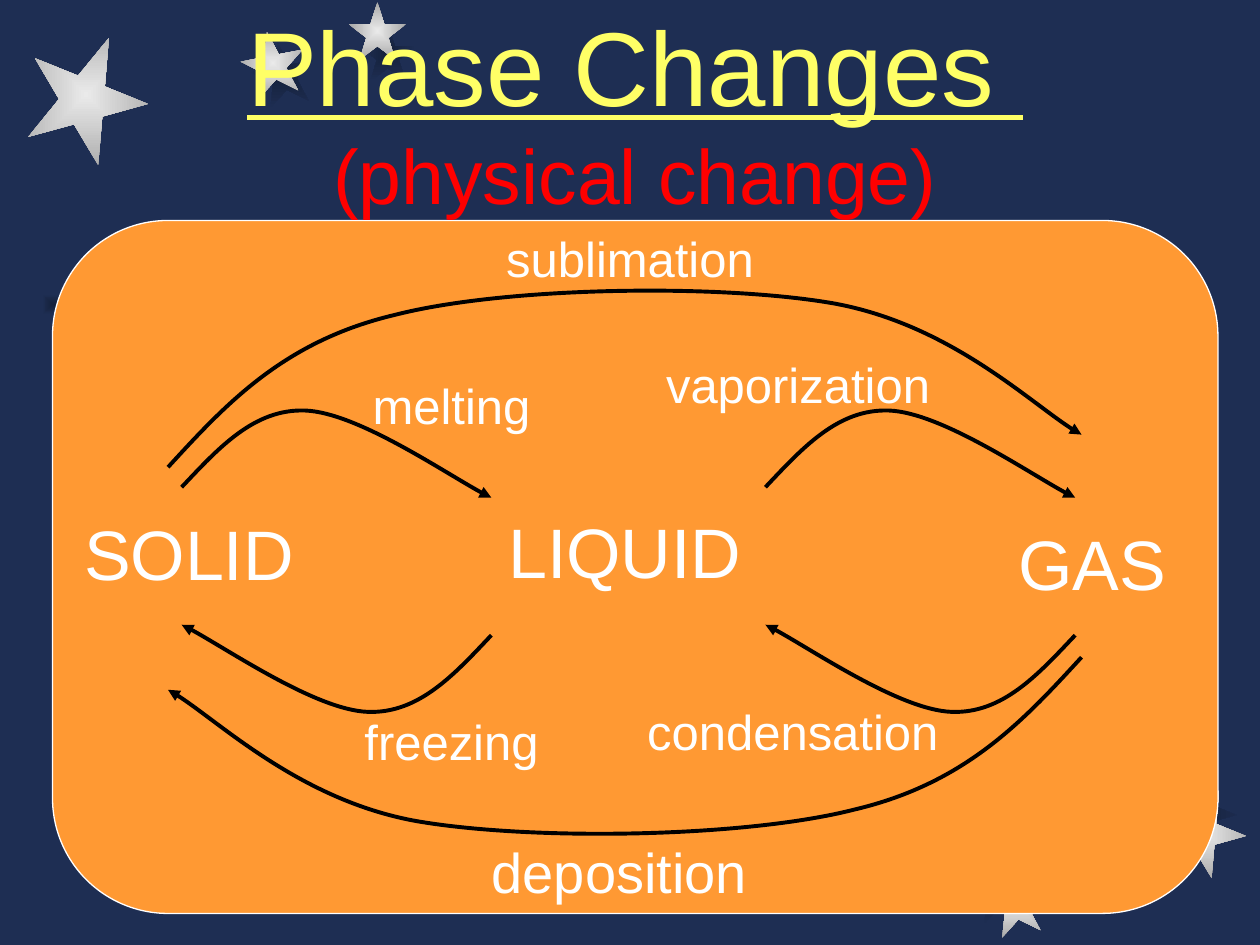
import pptx
import pptx.util
import pptx.dml.color
import pptx.enum.shapes
import pptx.enum.text
import pptx.oxml
import pptx.oxml.ns

RGBColor = pptx.dml.color.RGBColor
NAVY = RGBColor(0x1E, 0x2E, 0x53)
DARK_NAVY = RGBColor(0x15, 0x21, 0x3B)
SILVER = RGBColor(0xEA, 0xEA, 0xEA)
GRAY = RGBColor(0xA7, 0xA7, 0xA7)
ORANGE = RGBColor(0xFF, 0x99, 0x33)
WHITE = RGBColor(0xFF, 0xFF, 0xFF)
BLACK = RGBColor(0, 0, 0)
YELLOW = RGBColor(0xFF, 0xFF, 0x66)
RED = RGBColor(0xFF, 0, 0)
SHADE = (DARK_NAVY, NAVY)
SHINE = (SILVER, GRAY)

presentation = pptx.Presentation()
presentation.slide_width = pptx.util.Inches(10)
presentation.slide_height = pptx.util.Inches(7.5)
CELL = presentation.slide_width // 120
NAMESPACE = pptx.oxml.ns.nsdecls("a")
SHAPES = pptx.enum.shapes.MSO_SHAPE
qn = pptx.oxml.ns.qn

slide = presentation.slides.add_slide(presentation.slide_layouts[6])
slide.background.fill.solid()
slide.background.fill.fore_color.rgb = NAVY


def cells(*values):
    return [round(value * CELL) for value in values]


def add_text(left, top, width, height, runs):
    box = slide.shapes.add_textbox(*cells(left, top, width, height))
    frame = box.text_frame
    frame.word_wrap = True
    paragraph = frame.paragraphs[0]
    paragraph.alignment = pptx.enum.text.PP_ALIGN.CENTER
    for index, (text, size, color, underline) in enumerate(runs):
        if index:
            paragraph.add_line_break()
        run = paragraph.add_run()
        run.text = text
        run.font.name = "Arial"
        run.font.size = pptx.util.Pt(size)
        run.font.color.rgb = color
        run.font.underline = underline
    return frame


decorations = [
    (SHAPES.STAR_5_POINT, 24, 4, 6, 6, 349, SHADE),
    (SHAPES.STAR_5_POINT, 34.2, 2.3, 5.5, 5.5, 0, SHADE),
    (SHAPES.STAR_5_POINT, 23, 3, 6, 6, 349, SHINE),
    (SHAPES.STAR_5_POINT, 33.2, 0.2, 5.5, 5.5, 0, SHINE),
    (SHAPES.STAR_5_POINT, 92, 81.7, 6, 6, 349, SHADE),
    (SHAPES.STAR_5_POINT, 109.7, 73, 8, 8, 22, SHADE),
    (SHAPES.STAR_5_POINT, 93.7, 83, 6, 6, 349, SHINE),
    (SHAPES.STAR_5_POINT, 110.6, 75, 8, 8, 22, SHINE),
    (SHAPES.STAR_5_POINT, 2.4, 3.2, 11.6, 11.6, 22, SHINE),
    (SHAPES.RECTANGLE, 4, 28, 106, 2, 0, SHADE),
]
for kind, left, top, width, height, rotation, colors in decorations:
    shape = slide.shapes.add_shape(kind, *cells(left, top, width, height))
    shape.rotation = rotation
    shape.shadow.inherit = False
    shape.line.fill.background()
    shape.fill.gradient()
    for stop, color in zip(shape.fill.gradient_stops, colors):
        stop.color.rgb = color
    linear = shape.element.spPr.find(qn("a:gradFill")).find(qn("a:lin"))
    linear.getparent().replace(linear, pptx.oxml.parse_xml(
        f'<a:path {NAMESPACE} path="shape">'
        '<a:fillToRect l="50000" t="50000" r="50000" b="50000"/></a:path>'))

panel = slide.shapes.add_shape(SHAPES.ROUNDED_RECTANGLE, *cells(5, 21, 111, 66))
panel.shadow.inherit = False
panel.fill.solid()
panel.fill.fore_color.rgb = ORANGE
panel.line.color.rgb = WHITE
panel.line.width = pptx.util.Pt(0.75)

melting = [(17.3, 46.4), (20.8, 42.7), (24.2, 38.9), (29.1, 39.1),
           (34, 39.3), (43.8, 46), (46.8, 47.4)]
sublimation = [(16, 44.5), (21.5, 38.5), (27, 32.5), (37.6, 30), (48.1, 27.3),
               (68.5, 27), (79.4, 28.9), (90.4, 30.9), (99.1, 39.3), (103, 41.4)]
freezing = [(64.1 - x, 106.9 - y) for x, y in melting]
deposition = [(119 - x, 107.1 - y) for x, y in sublimation]
vaporization, condensation = [
    [(x + 55.6, y) for x, y in curve] for curve in (melting, freezing)]

for curve in (melting, deposition, freezing, condensation, vaporization, sublimation):
    points = [cells(*point) for point in curve]
    builder = slide.shapes.build_freeform(*points[0])
    builder.add_line_segments(points[1:], close=False)
    arrow = builder.convert_to_shape()
    arrow.shadow.inherit = False
    arrow.fill.background()
    arrow.line.color.rgb = BLACK
    arrow.line.width = pptx.util.Pt(2.25)
    arrow.line._get_or_add_ln().append(
        pptx.oxml.parse_xml(f'<a:tailEnd {NAMESPACE} type="triangle"/>'))
    segments = list(arrow.element.iter(qn("a:lnTo")))
    for start in range(0, len(segments), 3):
        bezier = pptx.oxml.parse_xml(f"<a:cubicBezTo {NAMESPACE}/>")
        segments[start].addprevious(bezier)
        for segment in segments[start:start + 3]:
            bezier.append(segment[0])
            segment.getparent().remove(segment)

labels = [
    ("SOLID", 6, 48, 24, 40),
    ("LIQUID", 46, 47.8, 27, 40),
    ("GAS", 92, 49, 24, 40),
    ("sublimation", 45, 21.2, 30, 28),
    ("melting", 28, 35.2, 30, 28),
    ("vaporization", 61, 33.2, 30, 28),
    ("freezing", 28, 67.2, 30, 28),
    ("condensation", 58, 66.2, 35, 28),
    ("deposition", 44, 79.2, 30, 32),
]
label_rows = {28: 6.8, 32: 7.6, 40: 9.2}
for text, left, top, width, size in labels:
    frame = add_text(left, top, width, label_rows[size], [(text, size, WHITE, False)])
    frame.auto_size = pptx.enum.text.MSO_AUTO_SIZE.SHAPE_TO_FIT_TEXT

title = add_text(3, 0, 115, 21, [("Phase Changes ", 60, YELLOW, True),
                                 ("(physical change)", 44, RED, False)])
title.vertical_anchor = pptx.enum.text.MSO_ANCHOR.MIDDLE

presentation.save("out.pptx")
